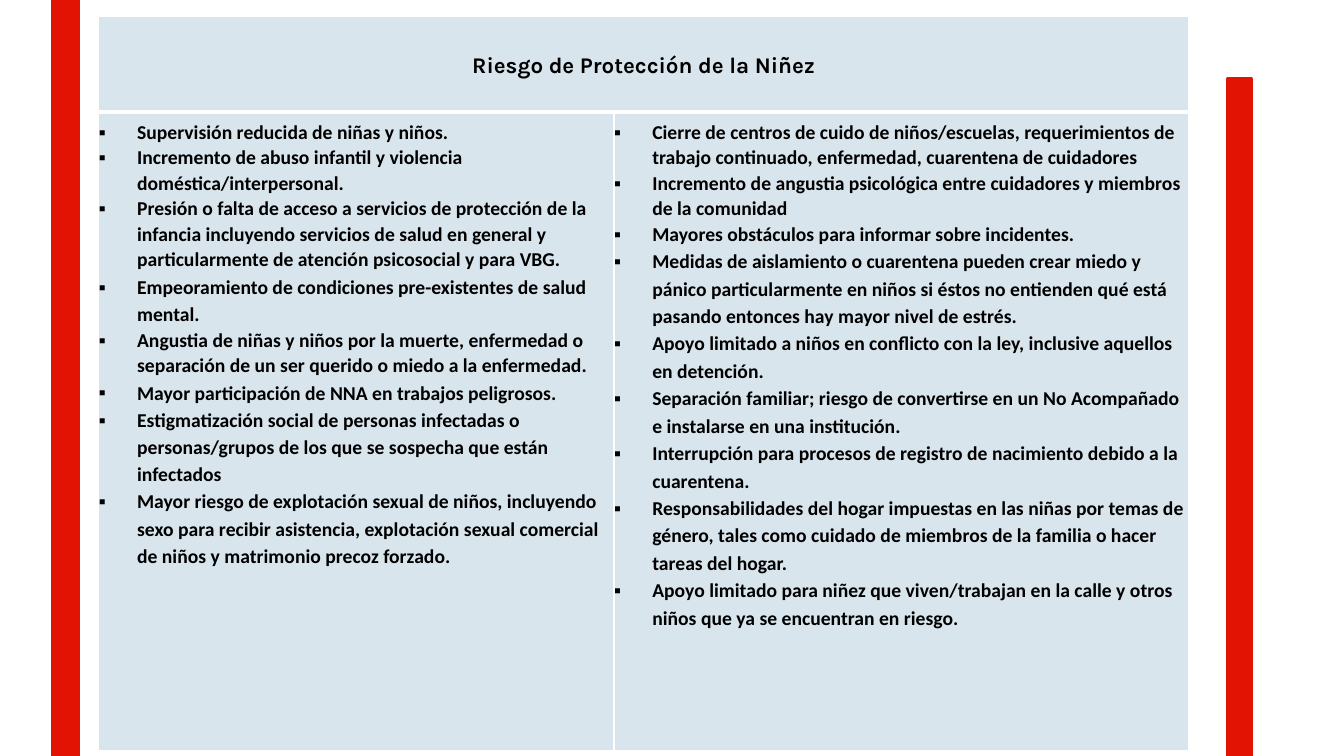
"""Build the slide on child protection risks: a two-column table between red bars."""
import pptx
import pptx.dml.color
import pptx.enum.shapes
import pptx.enum.text
import pptx.oxml.ns
import pptx.util
from lxml import etree

TITLE = "Riesgo de Protección de la Niñez"
RISKS = [
    [
        (1.07, "Supervisión reducida de niñas y niños."),
        (1.07, "Incremento de abuso infantil y violencia doméstica/interpersonal."),
        (1.07, "Presión o falta de acceso a servicios de protección de la infancia incluyendo "
               "servicios de salud en general y particularmente de atención psicosocial y para VBG."),
        (1.15, "Empeoramiento de condiciones pre-existentes de salud mental."),
        (1.07, "Angustia de niñas y niños por la muerte, enfermedad o separación de un ser "
               "querido o miedo a la enfermedad."),
        (1.15, "Mayor participación de NNA en trabajos peligrosos."),
        (1.14, "Estigmatización social de personas infectadas o personas/grupos de los que se "
               "sospecha que están infectados"),
        (1.14, "Mayor riesgo de explotación sexual de niños, incluyendo sexo para recibir "
               "asistencia, explotación sexual comercial de niños y matrimonio precoz forzado."),
    ],
    [
        (1.07, "Cierre de centros de cuido de niños/escuelas, requerimientos de trabajo "
               "continuado, enfermedad, cuarentena de cuidadores"),
        (1.07, "Incremento de angustia psicológica entre cuidadores y miembros de la comunidad"),
        (1.07, "Mayores obstáculos para informar sobre incidentes."),
        (1.15, "Medidas de aislamiento o cuarentena pueden crear miedo y pánico particularmente "
               "en niños si éstos no entienden qué está pasando entonces hay mayor nivel de estrés."),
        (1.15, "Apoyo limitado a niños en conflicto con la ley, inclusive aquellos en detención."),
        (1.15, "Separación familiar; riesgo de convertirse en un No Acompañado e instalarse en "
               "una institución."),
        (1.15, "Interrupción para procesos de registro de nacimiento debido a la cuarentena."),
        (1.15, "Responsabilidades del hogar impuestas en las niñas por temas de género, tales "
               "como cuidado de miembros de la familia o hacer tareas del hogar."),
        (1.15, "Apoyo limitado para niñez que viven/trabajan en la calle y otros niños que ya se "
               "encuentran en riesgo."),
    ],
]
COLORS = {"bar": "E31303", "cell": "D9E5EC", "border": "FFFFFF", "text": "000000"}
SLIDE_WIDTH, SLIDE_HEIGHT = 13.33, 7.5
BARS = [(0.52, 0, 0.25), (12.18, 0.78, 0.23)]
TABLE_LEFT, TABLE_TOP = 0.98, 0.16
COLUMNS, ROWS = [5.11, 5.7], [0.95, 6.34]
TITLE_INSET, BODY_INSET, BULLET_INDENT = 0.35, 0.07, 0.38
BORDER_WIDTH, RULE_WIDTH = 1, 3

inches = pptx.util.Inches


def color(name):
    return pptx.dml.color.RGBColor.from_string(COLORS[name])


def add_element(parent, tag, **attributes):
    return etree.SubElement(parent, pptx.oxml.ns.qn(tag), **attributes)


def add_bar(slide, left, top, width):
    bar = slide.shapes.add_shape(
        pptx.enum.shapes.MSO_SHAPE.RECTANGLE,
        inches(left), inches(top), inches(width), inches(SLIDE_HEIGHT - top))
    bar.shadow.inherit = False
    bar.fill.solid()
    bar.fill.fore_color.rgb = color("bar")
    bar.line.color.rgb = color("bar")
    bar.line.width = pptx.util.Pt(2.75)


def style_cell(cell, top_inset, top_width, bottom_width):
    cell.margin_left = cell.margin_right = cell.margin_bottom = 0
    cell.margin_top = inches(top_inset)
    cell.vertical_anchor = pptx.enum.text.MSO_ANCHOR.TOP
    properties = cell._tc.get_or_add_tcPr()
    widths = {"L": BORDER_WIDTH, "R": BORDER_WIDTH, "T": top_width, "B": bottom_width}
    for side, width in widths.items():
        line = add_element(properties, f"a:ln{side}", w=str(pptx.util.Pt(width)))
        fill = add_element(line, "a:solidFill")
        add_element(fill, "a:srgbClr", val=COLORS["border"])
    cell.fill.solid()
    cell.fill.fore_color.rgb = color("cell")


def add_text(paragraph, text, font_name, size, spacing):
    paragraph.line_spacing = spacing
    run = paragraph.add_run()
    run.text = text
    run.font.name = font_name
    run.font.size = pptx.util.Pt(size)
    run.font.bold = True
    run.font.color.rgb = color("text")


def add_bullet(paragraph):
    properties = paragraph._p.get_or_add_pPr()
    properties.set("marL", str(inches(BULLET_INDENT)))
    properties.set("indent", str(-inches(BULLET_INDENT)))
    add_element(properties, "a:buFont", typeface="Calibri")
    add_element(properties, "a:buChar", char="▪")


def add_risk_table(slide):
    table = slide.shapes.add_table(
        len(ROWS), len(COLUMNS), inches(TABLE_LEFT), inches(TABLE_TOP),
        inches(sum(COLUMNS)), inches(sum(ROWS))).table
    table.first_row = table.horz_banding = False
    for column, width in zip(table.columns, COLUMNS):
        column.width = inches(width)
    for row, height in zip(table.rows, ROWS):
        row.height = inches(height)

    title_cell = table.cell(0, 0)
    title_cell.merge(table.cell(0, 1))
    for index, risks in enumerate(RISKS):
        style_cell(table.cell(0, index), TITLE_INSET, BORDER_WIDTH, RULE_WIDTH)
        cell = table.cell(1, index)
        style_cell(cell, BODY_INSET, RULE_WIDTH, BORDER_WIDTH)
        frame = cell.text_frame
        for position, (spacing, text) in enumerate(risks):
            paragraph = frame.add_paragraph() if position else frame.paragraphs[0]
            add_bullet(paragraph)
            add_text(paragraph, text, "Calibri", 14, spacing)
    title = title_cell.text_frame.paragraphs[0]
    title.alignment = pptx.enum.text.PP_ALIGN.CENTER
    add_text(title, TITLE, "Karla", 16, 1.07)


def main():
    presentation = pptx.Presentation()
    presentation.slide_width = inches(SLIDE_WIDTH)
    presentation.slide_height = inches(SLIDE_HEIGHT)
    slide = presentation.slides.add_slide(presentation.slide_layouts[6])
    for bar in BARS:
        add_bar(slide, *bar)
    add_risk_table(slide)
    presentation.save("out.pptx")


if __name__ == "__main__":
    main()
